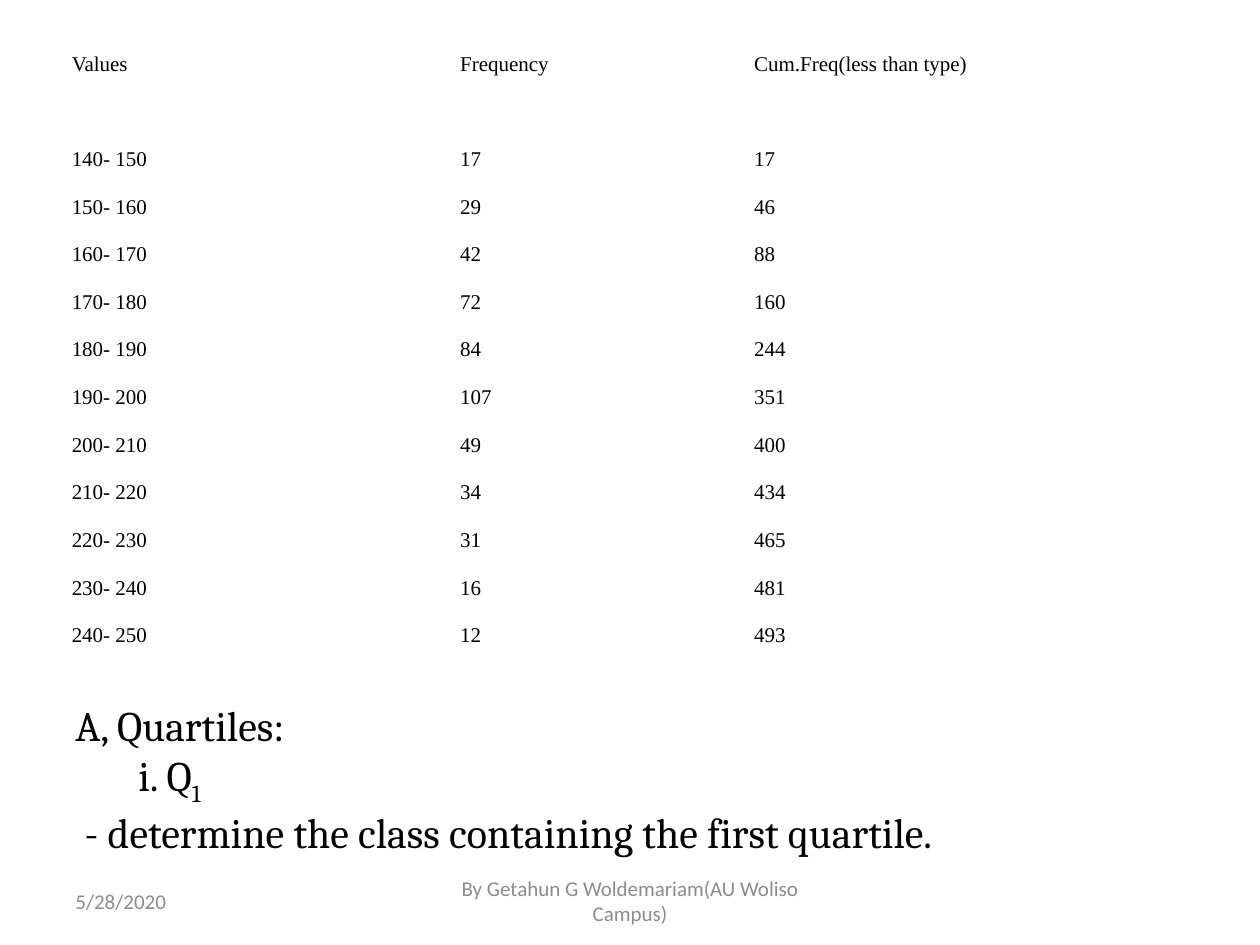
from dataclasses import dataclass

from pptx import Presentation
from pptx.dml.color import RGBColor
from pptx.enum.text import MSO_ANCHOR, PP_ALIGN
from pptx.util import Inches, Pt

LEFT, CENTER, JUSTIFY = PP_ALIGN.LEFT, PP_ALIGN.CENTER, PP_ALIGN.JUSTIFY
TOP, MIDDLE = MSO_ANCHOR.TOP, MSO_ANCHOR.MIDDLE

BLANK_LAYOUT = 6
UNITS_PER_INCH = 12


@dataclass(frozen=True)
class TextStyle:
    font: str
    size: int
    color: str


@dataclass(frozen=True)
class Theme:
    table: TextStyle = TextStyle("Times New Roman", 12, "000000")
    body: TextStyle = TextStyle("Cambria", 24, "000000")
    footer: TextStyle = TextStyle("Calibri", 12, "8C8C8C")
    cell_margin: float = 0.07
    indent: float = 0.5
    subscript: int = -25


def grid(units):
    """Turn grid units, twelve to the inch, into a length."""
    return Inches(units / UNITS_PER_INCH)


class SlideBuilder:
    def __init__(self, slide, theme):
        self.slide = slide
        self.theme = theme

    def run(self, p, text, style, subscript=False):
        r = p.add_run()
        r.text = text
        r.font.name = style.font
        r.font.size = Pt(style.size)
        r.font.color.rgb = RGBColor.from_string(style.color)
        if subscript:
            r.font._element.set("baseline", str(self.theme.subscript * 1000))

    def text(self, box, paragraphs, style, align=LEFT, anchor=TOP):
        """Each paragraph is (level, runs); each run is (text, subscript)."""
        sp = self.slide.shapes.add_textbox(*map(grid, box))
        tf = sp.text_frame
        tf.word_wrap = True
        tf.vertical_anchor = anchor
        for i, (level, runs) in enumerate(paragraphs):
            p = tf.add_paragraph() if i else tf.paragraphs[0]
            p.alignment = align
            if level:
                p.level = level
                pPr = p._p.get_or_add_pPr()
                pPr.set("marL", str(Inches(level * self.theme.indent)))
                pPr.set("indent", "0")
            for content, subscript in runs:
                self.run(p, content, style, subscript)

    def table(self, box, col_widths, row_heights, rows):
        frame = self.slide.shapes.add_table(
            len(rows), len(col_widths), *map(grid, box))
        table = frame.table
        table.first_row = table.horz_banding = False
        for column, width in zip(table.columns, col_widths):
            column.width = grid(width)
        for row, height, values in zip(table.rows, row_heights, rows):
            row.height = grid(height)
            for cell, value in zip(row.cells, values):
                cell.fill.background()
                cell.margin_left = cell.margin_right = Inches(self.theme.cell_margin)
                cell.margin_top = cell.margin_bottom = 0
                p = cell.text_frame.paragraphs[0]
                p.alignment = JUSTIFY
                self.run(p, str(value), self.theme.table)


def frequency_rows():
    """Ten-wide classes from 140 with their running totals."""
    rows = [("Values", "Frequency", "Cum.Freq(less than type)")]
    total = 0
    for i, count in enumerate((17, 29, 42, 72, 84, 107, 49, 34, 31, 16, 12)):
        total += count
        low = 140 + 10 * i
        rows.append((f"{low}- {low + 10}", count, total))
    return rows


def main():
    prs = Presentation()
    prs.slide_width, prs.slide_height = Inches(10), Inches(7.5)
    theme = Theme()
    slide = prs.slides.add_slide(prs.slide_layouts[BLANK_LAYOUT])
    builder = SlideBuilder(slide, theme)

    rows = frequency_rows()
    table_height = 59
    row_height = table_height / (len(rows) + 1)  # the header is two rows high
    heights = [2 * row_height] + [row_height] * (len(rows) - 1)
    builder.table((6, 5, 93, table_height), (37, 28, 28), heights, rows)

    builder.text((6, 66, 93, 15.75), [
        (0, [("A, Quartiles:", False)]),
        (1, [("i. Q", False), ("1", True)]),
        (0, [(" - determine the class containing the first quartile.", False)]),
    ], theme.body)

    footer_top, footer_height = 83.4, 4.8
    for left, width, content, align in (
        (6, 28, "5/28/2020", LEFT),
        (41, 38, "By Getahun G Woldemariam(AU Woliso Campus)", CENTER),
    ):
        builder.text((left, footer_top, width, footer_height),
                     [(0, [(content, False)])], theme.footer, align, MIDDLE)

    prs.save("out.pptx")


if __name__ == "__main__":
    main()
